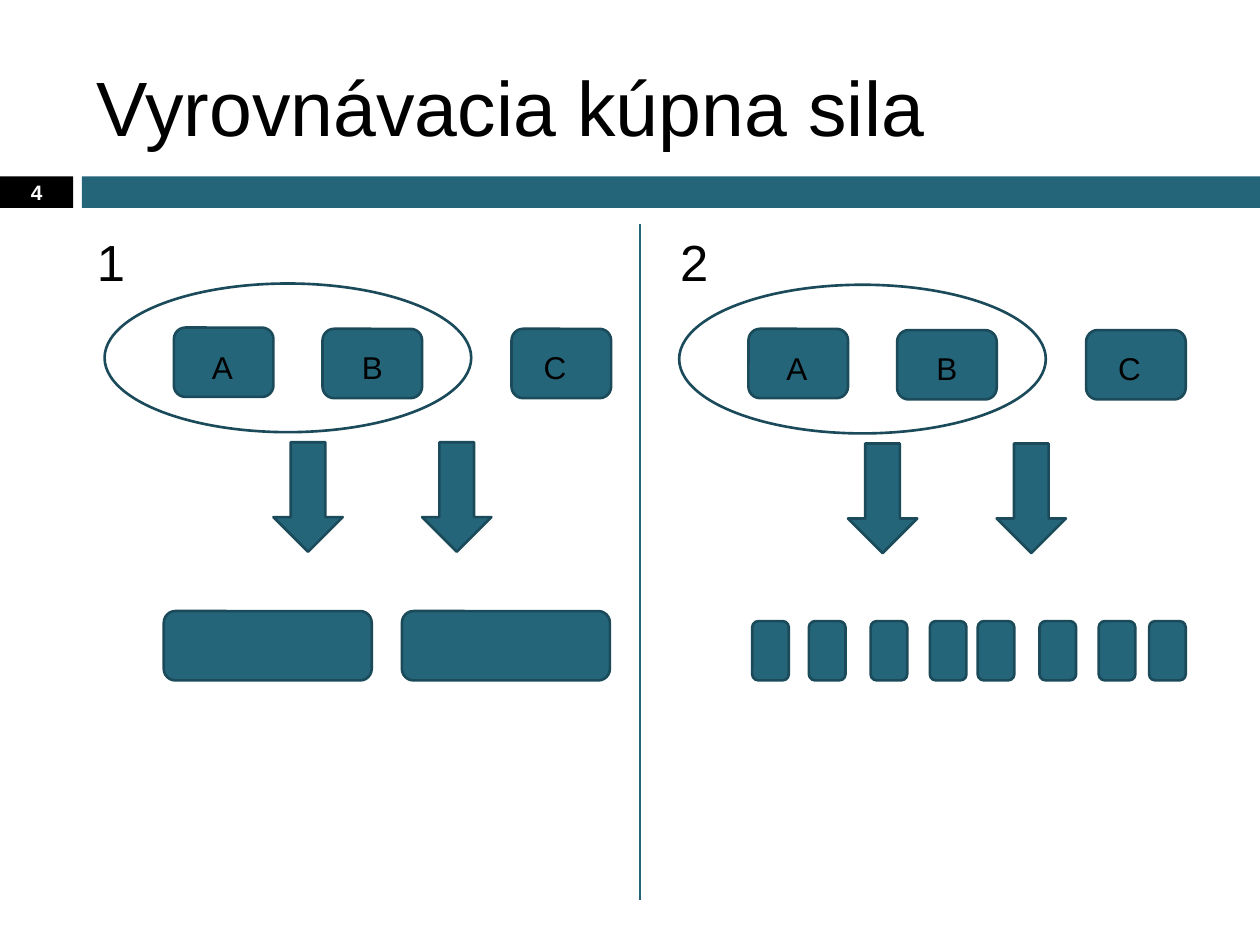
from lxml import etree
from pptx import Presentation
from pptx.dml.color import RGBColor
from pptx.enum.shapes import MSO_CONNECTOR, MSO_SHAPE
from pptx.enum.text import MSO_ANCHOR, PP_ALIGN
from pptx.oxml.ns import qn
from pptx.util import Inches, Pt

RECTANGLE = MSO_SHAPE.RECTANGLE
ROUNDED = MSO_SHAPE.ROUNDED_RECTANGLE
OVAL = MSO_SHAPE.OVAL
DOWN_ARROW = MSO_SHAPE.DOWN_ARROW
STRAIGHT = MSO_CONNECTOR.STRAIGHT
LEFT, CENTER = PP_ALIGN.LEFT, PP_ALIGN.CENTER
TOP, MIDDLE = MSO_ANCHOR.TOP, MSO_ANCHOR.MIDDLE

TEAL, DARK_TEAL = "25657A", "1B4B5A"
BLACK, WHITE = "000000", "FFFFFF"

# Offset of the right-hand diagram from the left-hand one
PANEL_SHIFT = (4.56, 0.01)


def color(value):
    return RGBColor.from_string(value)


def add_shape(slide, kind, left, top, width, height, fill=TEAL, line=DARK_TEAL):
    shape = slide.shapes.add_shape(
        kind, Inches(left), Inches(top), Inches(width), Inches(height))
    shape.shadow.inherit = False
    if fill:
        shape.fill.solid()
        shape.fill.fore_color.rgb = color(fill)
    else:
        shape.fill.background()
    if line:
        shape.line.color.rgb = color(line)
        shape.line.width = Pt(1.5)
    else:
        shape.line.fill.background()
    return shape


def add_text(slide, text, left, top, width, height, size=18, fill=BLACK,
             bold=False, align=LEFT, anchor=TOP, inset_top=0.05):
    box = slide.shapes.add_textbox(
        Inches(left), Inches(top), Inches(width), Inches(height))
    frame = box.text_frame
    frame.word_wrap = True
    frame.vertical_anchor = anchor
    frame.margin_top = Inches(inset_top)
    para = frame.paragraphs[0]
    para.alignment = align
    span = para.add_run()
    span.text = text
    span.font.name = "Arial"
    span.font.size = Pt(size)
    span.font.bold = bold
    span.font.color.rgb = color(fill)


def add_divider(slide, x, top, bottom):
    divider = slide.shapes.add_connector(
        STRAIGHT, Inches(x), Inches(top), Inches(x), Inches(bottom))
    divider.line.color.rgb = color(TEAL)
    divider.line.width = Pt(0.79)
    etree.SubElement(divider._element.spPr, qn("a:effectLst"))


def add_header(slide):
    add_shape(slide, RECTANGLE, 0, 1.4, 0.58, 0.25, fill=BLACK, line=None)
    add_shape(slide, RECTANGLE, 0.65, 1.4, 9.35, 0.25, line=None)
    add_text(slide, "Vyrovnávacia kúpna sila", 0.67, 0.25, 8.92, 1.08,
             size=44, anchor=MIDDLE, inset_top=0.14)
    add_text(slide, "4", 0, 1.39, 0.58, 0.27, size=11.9, fill=WHITE,
             bold=True, align=CENTER, anchor=MIDDLE)


def add_group_diagram(slide, shift_x=0, shift_y=0):
    """Blocks A, B and C, the ellipse round A and B, and two arrows."""
    for left, top in ((1.38, 2.6), (2.56, 2.61), (4.06, 2.61)):
        add_shape(slide, ROUNDED, left + shift_x, top + shift_y, 0.79, 0.55)
    add_shape(slide, OVAL, 0.83 + shift_x, 2.25 + shift_y, 2.91, 1.18, fill=None)
    for letter, left, width in (("A", 1.44, 0.65), ("B", 2.72, 0.47), ("C", 4.13, 0.55)):
        add_text(slide, letter, left + shift_x, 2.71 + shift_y, width, 0.4,
                 align=CENTER)
    for left in (2.17, 3.35):
        add_shape(slide, DOWN_ARROW, left + shift_x, 3.51 + shift_y, 0.55, 0.87)


def add_block_row(slide, lefts, top, width, height):
    for left in lefts:
        add_shape(slide, ROUNDED, left, top, width, height)


def main():
    deck = Presentation()
    deck.slide_width, deck.slide_height = Inches(10), Inches(7.5)
    slide = deck.slides.add_slide(deck.slide_layouts[6])

    add_header(slide)
    for number, left in (("1", 0.67), ("2", 5.3)):
        add_text(slide, number, left, 1.74, 4.25, 5, size=29, inset_top=0.09)
    add_group_diagram(slide)
    add_group_diagram(slide, *PANEL_SHIFT)
    add_divider(slide, 5.08, 1.78, 7.14)
    add_block_row(slide, (1.3, 3.19), 4.85, 1.65, 0.55)
    add_block_row(slide, (5.97, 6.42, 6.91, 7.38, 7.76, 8.25, 8.72, 9.12),
                  4.93, 0.29, 0.47)

    deck.save("out.pptx")


if __name__ == "__main__":
    main()
